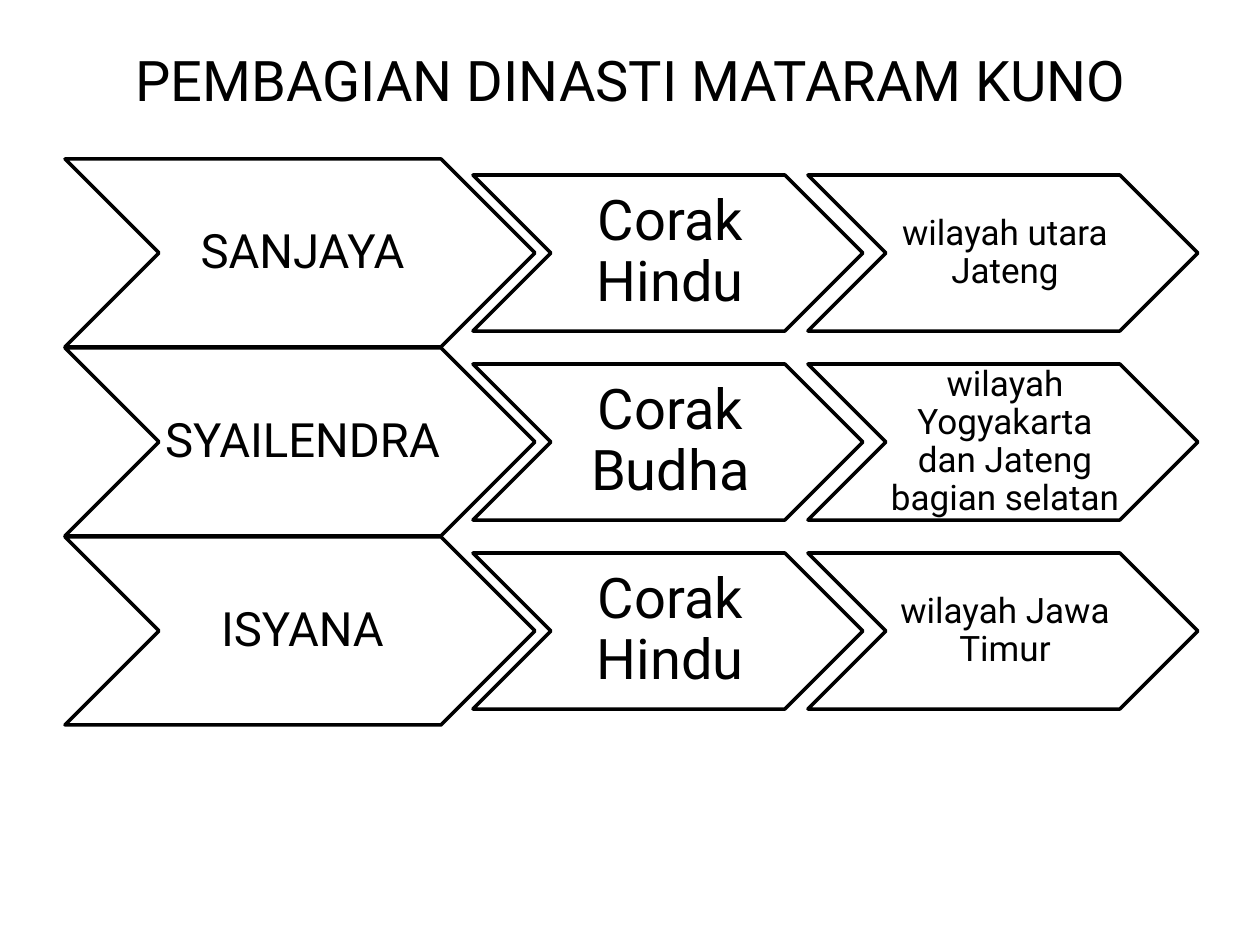
from typing import NamedTuple

from pptx import Presentation
from pptx.dml.color import RGBColor
from pptx.enum.shapes import MSO_SHAPE as Preset
from pptx.enum.text import MSO_ANCHOR as Anchor, PP_ALIGN as Align
from pptx.util import Emu, Pt

PX_PER_INCH = 126
INK = RGBColor(0x00, 0x00, 0x00)
PAPER = RGBColor(0xFF, 0xFF, 0xFF)
FONT = "Roboto"


class Column(NamedTuple):
    left: int
    width: int
    height: int
    size: int
    inset_left: int
    inset_y: int


class Box(NamedTuple):
    left: int
    top: int
    width: int
    height: int


COLUMNS = [
    Column(65, 470, 188, 27, 5, 2),
    Column(473, 390, 156, 32, 5, 2),
    Column(808, 390, 156, 20, 4, 1),
]
DYNASTIES = [
    ("SANJAYA", "Corak Hindu", "wilayah utara Jateng"),
    ("SYAILENDRA", "Corak Budha", "wilayah Yogyakarta dan Jateng bagian selatan"),
    ("ISYANA", "Corak Hindu", "wilayah Jawa Timur"),
]
FIRST_CENTER, ROW_PITCH = 253, 189


def px(length: int) -> Emu:
    return Emu(round(length * 914400 / PX_PER_INCH))


def set_all(target, values: dict) -> None:
    for name, value in values.items():
        setattr(target, name, value)


def add_text(page, box: Box, text: str, size: int, spacing: float = 1.0,
             insets: tuple[int, int, int, int] = (13, 6, 13, 6)) -> None:
    frame = page.shapes.add_textbox(*map(px, box)).text_frame
    left, top, right, bottom = map(px, insets)
    set_all(frame, {"word_wrap": True, "vertical_anchor": Anchor.MIDDLE,
                    "margin_left": left, "margin_top": top,
                    "margin_right": right, "margin_bottom": bottom})
    para = frame.paragraphs[0]
    set_all(para, {"alignment": Align.CENTER, "line_spacing": spacing})
    span = para.add_run()
    span.text = text
    set_all(span.font, {"name": FONT, "size": Pt(size)})
    span.font.color.rgb = INK


def add_chevron(page, column: Column, center: int, text: str) -> None:
    top = center - column.height // 2
    shape = page.shapes.add_shape(
        Preset.CHEVRON, *map(px, (column.left, top, column.width, column.height)))
    shape.shadow.inherit = False
    shape.fill.solid()
    shape.fill.fore_color.rgb = PAPER
    shape.line.color.rgb = INK
    shape.line.width = Pt(2)
    # The label sits between the notch and the start of the point
    label = Box(column.left + column.height // 2, top,
                column.width - column.height, column.height)
    add_text(page, label, text, column.size, 0.9,
             (column.inset_left, column.inset_y, 0, column.inset_y))


def main() -> None:
    deck = Presentation()
    deck.slide_width, deck.slide_height = px(1260), px(945)
    page = deck.slides.add_slide(deck.slide_layouts[6])

    # Title
    add_text(page, Box(64, 0, 1134, 158), "PEMBAGIAN DINASTI MATARAM KUNO", 32)

    # One row of chevrons per dynasty
    for row, texts in enumerate(DYNASTIES):
        for column, text in zip(COLUMNS, texts):
            add_chevron(page, column, FIRST_CENTER + row * ROW_PITCH, text)

    deck.save("out.pptx")


if __name__ == "__main__":
    main()
